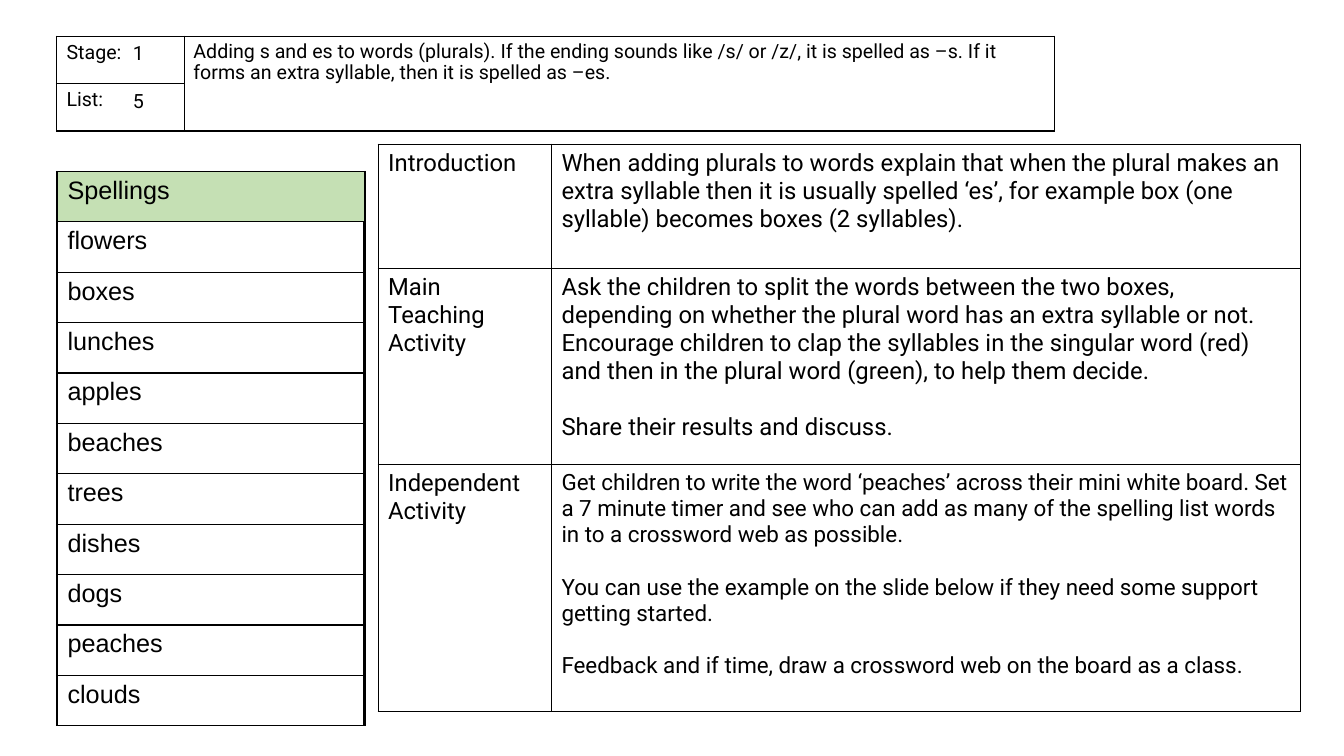
from lxml.etree import SubElement
from pptx import Presentation
from pptx.dml.color import RGBColor
from pptx.enum.shapes import MSO_SHAPE
from pptx.oxml.ns import qn
from pptx.util import Inches, Pt

BLACK = RGBColor(0x00, 0x00, 0x00)
WHITE = RGBColor(0xFF, 0xFF, 0xFF)
GREEN = RGBColor(0xC5, 0xE0, 0xB4)

STAGE, LIST_NUMBER = "1", "5"
RULE = (
    "Adding s and es to words (plurals). If the ending sounds like /s/ or /z/, "
    "it is spelled as –s. If it forms an extra syllable, then it is spelled as –es."
)
SPELLINGS = ["Spellings", "flowers", "boxes", "lunches", "apples", "beaches",
             "trees", "dishes", "dogs", "peaches", "clouds"]
ACTIVITIES = [
    ("Introduction", 17, [
        "When adding plurals to words explain that when the plural makes an extra "
        "syllable then it is usually spelled ‘es’, for example box (one syllable) "
        "becomes boxes (2 syllables).",
    ]),
    ("Main Teaching Activity", 17, [
        "Ask the children to split the words between the two boxes, depending on "
        "whether the plural word has an extra syllable or not. Encourage children "
        "to clap the syllables in the singular word (red) and then in the plural "
        "word (green), to help them decide.",
        "Share their results and discuss.",
    ]),
    ("Independent Activity", 16, [
        "Get children to write the word ‘peaches’ across their mini white board. "
        "Set a 7 minute timer and see who can add as many of the spelling list "
        "words in to a crossword web as possible.",
        "You can use the example on the slide below if they need some support "
        "getting started.",
        "Feedback and if time, draw a crossword web on the board as a class.",
    ]),
]


def write(frame, paragraphs, size, font="Roboto", line_spacing=None):
    """Fill a text frame, leaving one line's gap between paragraphs."""
    for index, text in enumerate(paragraphs):
        para = frame.paragraphs[0] if index == 0 else frame.add_paragraph()
        para.text = text
        para.font.name = font
        para.font.size = Pt(size)
        para.font.color.rgb = BLACK
        if line_spacing:
            para.line_spacing = line_spacing
        if index:
            para.space_before = Pt(round(size * 1.17))


def add_panel(page):
    """Add the white panel behind the lesson plan."""
    panel = page.shapes.add_shape(
        MSO_SHAPE.RECTANGLE, Inches(0.17), Inches(0.15), Inches(13), Inches(7.22))
    panel.shadow.inherit = False
    panel.fill.solid()
    panel.fill.fore_color.rgb = WHITE
    panel.line.color.rgb = WHITE
    panel.line.width = Pt(1)


def add_grid(page, left, top, widths, heights):
    """Add an unfilled table with thin black borders."""
    table = page.shapes.add_table(
        len(heights), len(widths), Inches(left), Inches(top),
        Inches(sum(widths)), Inches(sum(heights))).table
    table.first_row = table.horz_banding = False
    for column, width in zip(table.columns, widths):
        column.width = Inches(width)
    for row, height in zip(table.rows, heights):
        row.height = Inches(height)
    for cell in table.iter_cells():
        properties = cell._tc.get_or_add_tcPr()
        for side in ("a:lnL", "a:lnR", "a:lnT", "a:lnB"):
            line = SubElement(properties, qn(side), w=str(Pt(1)))
            fill = SubElement(line, qn("a:solidFill"))
            SubElement(fill, qn("a:srgbClr"), val=str(BLACK))
        cell.fill.background()
    return table


def add_note(page, left, top, width, height, text):
    """Add a wrapped text box in the heading panel."""
    box = page.shapes.add_textbox(
        Inches(left), Inches(top), Inches(width), Inches(height))
    box.text_frame.word_wrap = True
    write(box.text_frame, [text], 14, line_spacing=0.9)


def main():
    """Build the spelling lesson slide."""
    deck = Presentation()
    deck.slide_width, deck.slide_height = Inches(13.33), Inches(7.5)
    page = deck.slides.add_slide(deck.slide_layouts[6])
    add_panel(page)

    heading = add_grid(page, 0.56, 0.36, [1.27, 8.63], [0.47] * 2)
    heading.cell(0, 1).merge(heading.cell(1, 1))
    for row, label in enumerate(["Stage:", "List:"]):
        write(heading.cell(row, 0).text_frame, [label], 14)

    word_rows = [0.5] * len(SPELLINGS)
    add_grid(page, 0.56, 1.7, [3.05], word_rows)

    for row, number in enumerate([STAGE, LIST_NUMBER]):
        add_note(page, 1.22, 0.38 + row * 0.48, 0.47, 0.4, number)
    add_note(page, 1.82, 0.36, 8.64, 0.95, RULE)

    lesson = add_grid(page, 3.75, 1.43, [1.72, 7.43], [1.23, 1.95, 2.45])
    for row, (name, size, steps) in enumerate(ACTIVITIES):
        write(lesson.cell(row, 0).text_frame, [name], 17)
        write(lesson.cell(row, 1).text_frame, steps, size)

    words = add_grid(page, 0.57, 1.7, [3.05], word_rows)
    for row, word in enumerate(SPELLINGS):
        write(words.cell(row, 0).text_frame, [word], 18, "Arial")
    header_fill = words.cell(0, 0).fill
    header_fill.solid()
    header_fill.fore_color.rgb = GREEN

    deck.save("out.pptx")


if __name__ == "__main__":
    main()
